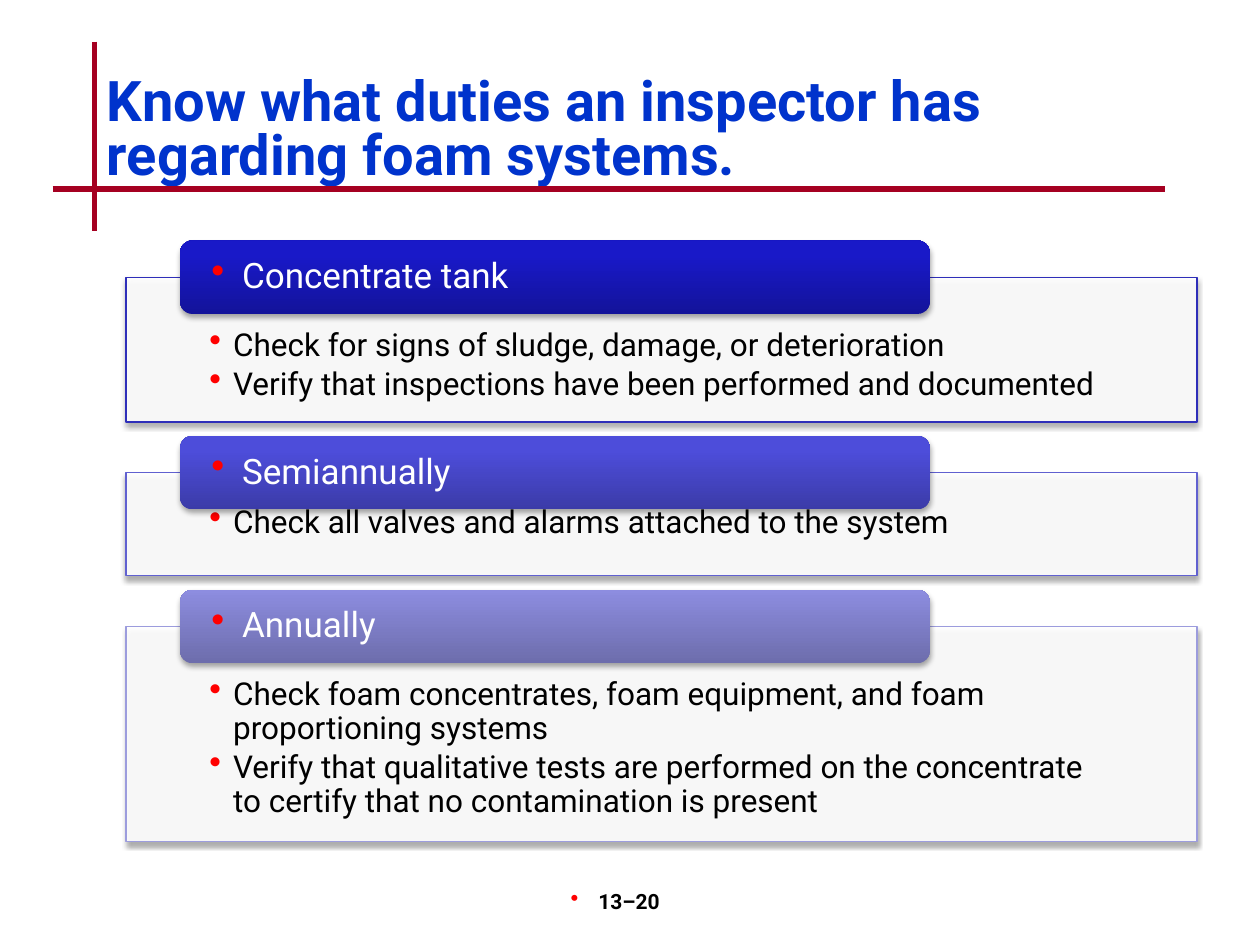
from lxml.etree import SubElement
from pptx import Presentation
from pptx.dml.color import RGBColor
from pptx.enum.shapes import MSO_CONNECTOR as Connector, MSO_SHAPE as Shape
from pptx.enum.text import MSO_ANCHOR as Anchor, MSO_AUTO_SIZE as AutoSize, PP_ALIGN as Align
from pptx.oxml.ns import qn
from pptx.util import Cm, Pt

FONT = "Roboto"
COLORS = {
    "title": "0033CC",
    "rule": "A50021",
    "bullet": "FF0000",
    "text": "000000",
    "panel": "FFFFFF",
    "shadow": "000000",
}
SECTIONS = [
    {
        "heading": "Concentrate tank",
        "duties": [
            "Check for signs of sludge, damage, or deterioration",
            "Verify that inspections have been performed and documented",
        ],
        "height": 2.92,
        "border": "2E2EB9",
        "gradient": [(0, "13139A"), (0.8, "1919C8")],
    },
    {
        "heading": "Semiannually",
        "duties": ["Check all valves and alarms attached to the system"],
        "height": 2.08,
        "border": "6060D0",
        "gradient": [(0, "3B3BA8"), (0.8, "4D4DDA")],
    },
    {
        "heading": "Annually",
        "duties": [
            "Check foam concentrates, foam equipment, and foam proportioning systems",
            "Verify that qualitative tests are performed on the concentrate "
            "to certify that no contamination is present",
        ],
        "height": 4.34,
        "border": "9C9CDD",
        "gradient": [(0, "6D6DAC"), (1, "8D8DE0")],
    },
]


def rgb(value):
    return RGBColor.from_string(value)


def add_element(parent, tag, **attributes):
    return SubElement(parent, qn(tag), {key: str(value) for key, value in attributes.items()})


def add_bullet(para, margin, hanging):
    properties = para._p.get_or_add_pPr()
    properties.set("marL", str(Cm(margin)))
    properties.set("indent", str(-Cm(hanging)))
    color = add_element(properties, "a:buClr")
    add_element(color, "a:srgbClr", val=COLORS["bullet"])
    add_element(properties, "a:buSzPct", val=110000)
    add_element(properties, "a:buChar", char="•")


def add_span(para, text, size, color, bold=False):
    span = para.add_run()
    span.text = text
    span.font.name = FONT
    span.font.size = Pt(size)
    span.font.bold = bold
    span.font.color.rgb = rgb(color)


def add_shadow(shape):
    effects = add_element(shape._element.spPr, "a:effectLst")
    shadow = add_element(effects, "a:outerShdw", blurRad=Pt(3.1), dist=Pt(1.8),
                         dir=5400000, rotWithShape=0)
    color = add_element(shadow, "a:srgbClr", val=COLORS["shadow"])
    add_element(color, "a:alpha", val=35000)


def add_text_frame(page, left, top, width, height, insets):
    box = page.shapes.add_textbox(Cm(left), Cm(top), Cm(width), Cm(height))
    frame = box.text_frame
    frame.word_wrap = True
    frame.margin_left, frame.margin_top, frame.margin_right, frame.margin_bottom = map(Cm, insets)
    return frame


def add_rule(page, left, top, right, bottom):
    rule = page.shapes.add_connector(Connector.STRAIGHT, Cm(left), Cm(top), Cm(right), Cm(bottom))
    rule.line.color.rgb = rgb(COLORS["rule"])
    rule.line.width = Pt(3)
    add_element(rule._element.spPr, "a:effectLst")


def add_title(page, left, top, width, height):
    add_rule(page, left, top - 0.56, left, top + 3.25)
    add_rule(page, left - 0.84, top + 2.41, left + 21.59, top + 2.41)
    title = page.shapes.title
    title.left, title.top, title.width, title.height = map(Cm, (left, top, width, height))
    frame = title.text_frame
    frame.word_wrap = True
    frame.auto_size = AutoSize.NONE
    frame.vertical_anchor = Anchor.MIDDLE
    para = frame.paragraphs[0]
    para.alignment = Align.LEFT
    para.line_spacing = 0.8
    add_span(para, "Know what duties an inspector has regarding foam systems.",
             32, COLORS["title"], True)


def add_panel(page, section, left, top, width, height):
    panel = page.shapes.add_shape(Shape.RECTANGLE, Cm(left), Cm(top), Cm(width), Cm(height))
    panel.fill.solid()
    panel.fill.fore_color.rgb = rgb(COLORS["panel"])
    color = panel._element.spPr.find(qn("a:solidFill")).find(qn("a:srgbClr"))
    add_element(color, "a:alpha", val=90000)
    panel.line.color.rgb = rgb(section["border"])
    panel.line.width = Pt(0.75)
    add_shadow(panel)

    frame = add_text_frame(page, left, top, width, height, (1.68, 1.04, 1.68, 0.36))
    for index, duty in enumerate(section["duties"]):
        para = frame.add_paragraph() if index else frame.paragraphs[0]
        add_bullet(para, 0.48, 0.48)
        para.level = 1
        para.line_spacing = 0.9
        para.space_after = Pt(3)
        add_span(para, duty, 18, COLORS["text"])


def add_tab(page, section, left, top, width, height):
    tab = page.shapes.add_shape(Shape.ROUNDED_RECTANGLE, Cm(left), Cm(top), Cm(width), Cm(height))
    tab.fill.gradient()
    tab.fill.gradient_angle = 90
    for stop, (position, color) in zip(tab.fill.gradient_stops, section["gradient"]):
        stop.position = position
        stop.color.rgb = rgb(color)
    tab.line.fill.background()
    add_shadow(tab)

    pad = 0.07
    frame = add_text_frame(page, left + pad, top + pad, width - 2 * pad, height - 2 * pad,
                           (0.56, 0, 0.56, 0))
    frame.vertical_anchor = Anchor.MIDDLE
    para = frame.paragraphs[0]
    add_bullet(para, 0.62, 0.62)
    para.line_spacing = 0.9
    add_span(para, section["heading"], 20, COLORS["panel"])


def add_sections(page, left, top, width, gap):
    for section in SECTIONS:
        add_panel(page, section, left, top, width, section["height"])
        add_tab(page, section, left + 1.09, top - 0.74, 0.7 * width, 1.48)
        top += section["height"] + gap


def add_page_number(page, left, top, width, height):
    frame = add_text_frame(page, left, top, width, height, (0.25, 0.13, 0.25, 0.13))
    para = frame.paragraphs[0]
    add_bullet(para, 0.15, 0.56)
    para.alignment = Align.CENTER
    add_span(para, "13–20", 12, COLORS["text"], True)


def main():
    deck = Presentation()
    deck.slide_width, deck.slide_height = Cm(25.4), Cm(19.05)
    page = deck.slides.add_slide(deck.slide_layouts[5])
    add_title(page, 1.9, 1.4, 22.02, 2.54)
    add_sections(page, 2.54, 5.59, 21.59, 1.02)
    add_page_number(page, 9.96, 17.78, 5.28, 1.27)
    deck.save("out.pptx")


if __name__ == "__main__":
    main()
